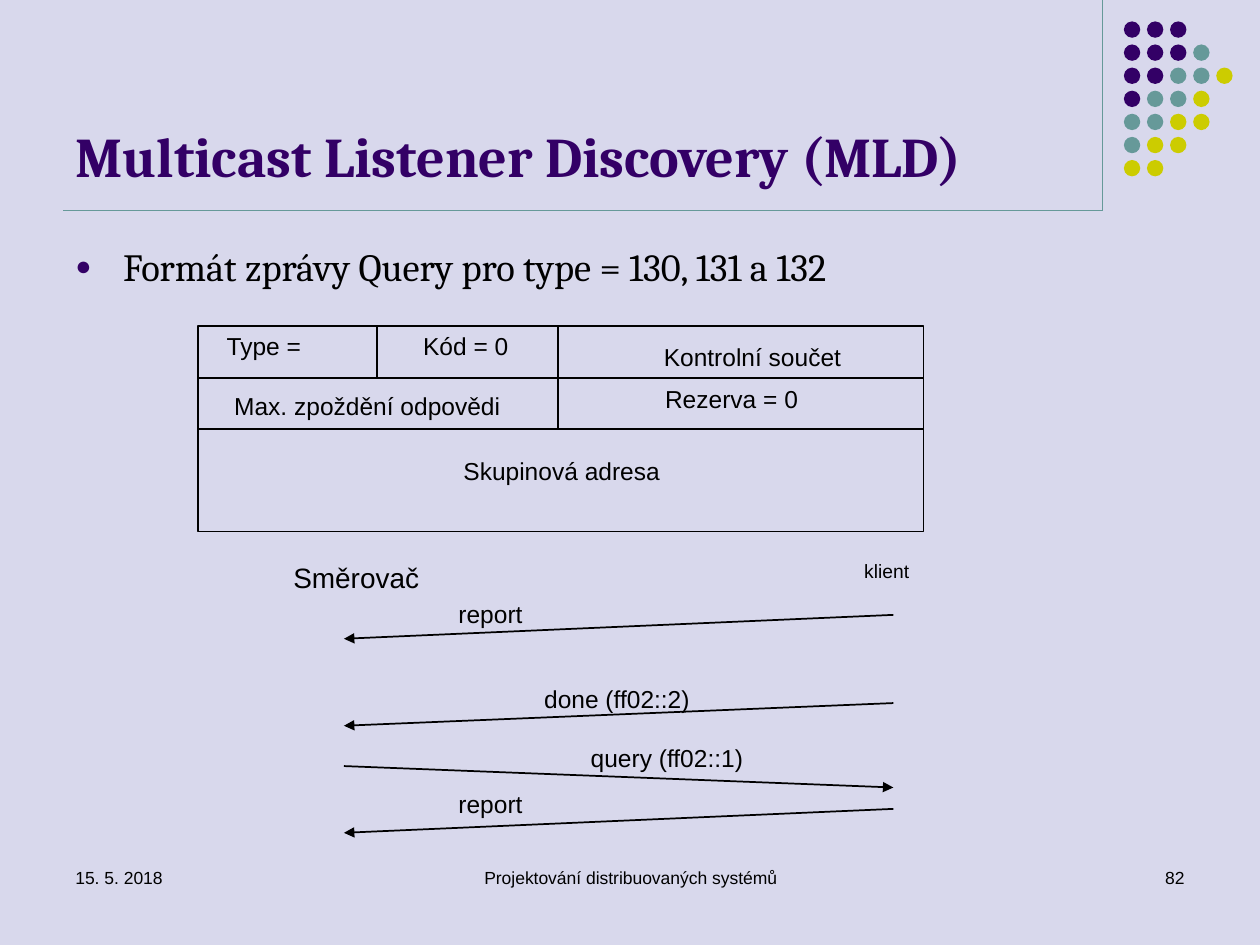
from lxml.etree import SubElement
from pptx import Presentation
from pptx.dml.color import RGBColor as RGB
from pptx.enum.shapes import MSO_CONNECTOR as CONN, MSO_SHAPE as SHAPE
from pptx.enum.text import MSO_ANCHOR as ANCHOR, PP_ALIGN as ALIGN
from pptx.oxml.ns import qn
from pptx.util import Inches, Pt

COLORS = {"bg": "D8D8EC", "purple": "330066", "teal": "669999",
          "lime": "CCCC00", "black": "000000"}
TITLE = "Multicast Listener Discovery (MLD)"
BULLET = "Formát zprávy Query pro type = 130, 131 a 132"
FOOTER = [("15. 5. 2018", 0.5, 2.33, ALIGN.LEFT),
          ("Projektování distribuovaných systémů", 3.42, 3.17, ALIGN.CENTER),
          ("82", 7.17, 2.33, ALIGN.RIGHT)]
DOTS = ["PPP", "PPPT", "PPTTL", "PTTL", "TTLL", "TLL", "LL"]
DOT_COLORS = {"P": "purple", "T": "teal", "L": "lime"}
DOT_LEFT, DOT_TOP, DOT_STEP, DOT_SIZE = 8.92, 0.17, 0.55 / 3, 0.13
RULE_X, RULE_Y = 8.75, 1.67

FRAME = (1.57, 2.59, 5.76, 1.63)
FRAME_ROWS = 4
COLUMN_RULES = [(2.99, 1), (4.43, 2)]
FIELDS = [("Type =", 1.7, 2.56, 0.89, 0.5),
          ("Kód = 0", 3.26, 2.56, 0.96, 0.5),
          ("Kontrolní součet", 5.17, 2.65, 1.77, 0.5),
          ("Max. zpoždění odpovědi", 1.76, 3.04, 2.48, 0.5),
          ("Skupinová adresa", 3.58, 3.55, 1.87, 0.61),
          ("Rezerva = 0", 5.18, 2.98, 1.33, 0.5)]

ROUTER_X, CLIENT_X = 2.73, 7.09
ACTORS = [("Směrovač", 2.23, 4.38, 1.25, 0.4, 16),
          ("klient", 6.76, 4.38, 0.72, 0.51, 11)]
MESSAGES = [("report", 3.54, 4.69, 0.8, 0.38, "router", 4.88, 5.07),
            ("done (ff02::2)", 4.22, 5.36, 1.45, 0.4, "router", 5.58, 5.76),
            ("query (ff02::1)", 4.59, 5.83, 1.5, 0.37, "client", 6.08, 6.25),
            ("report", 3.54, 6.2, 0.8, 0.41, "router", 6.42, 6.61)]

prs = Presentation()
prs.slide_width, prs.slide_height = Inches(10), Inches(7.5)
s = prs.slides.add_slide(prs.slide_layouts[6])
s.background.fill.solid()
s.background.fill.fore_color.rgb = RGB.from_string(COLORS["bg"])


def add_text(text, x, y, w, h, size=14, font="Arial", color="black", bold=False,
             align=ALIGN.LEFT, anchor=ANCHOR.TOP):
    sp = s.shapes.add_textbox(*map(Inches, (x, y, w, h)))
    tf = sp.text_frame
    tf.word_wrap, tf.vertical_anchor = True, anchor
    p = tf.paragraphs[0]
    p.alignment = align
    r = p.add_run()
    r.text = text
    r.font.size, r.font.name, r.font.bold = Pt(size), font, bold
    r.font.color.rgb = RGB.from_string(COLORS[color])
    return p


def add_label(text, *box, size=14):
    p = add_text(text, *box, size=size)
    p.line_spacing, p.space_after = 1.07, Pt(8)


def add_line(x1, y1, x2, y2, color="black", width=1, arrow=False):
    sp = s.shapes.add_connector(CONN.STRAIGHT, *map(Inches, (x1, y1, x2, y2)))
    sp.line.color.rgb = RGB.from_string(COLORS[color])
    sp.line.width = Pt(width)
    if arrow:
        SubElement(sp.line._get_or_add_ln(), qn("a:tailEnd"), type="triangle")
    SubElement(sp._element.spPr, qn("a:effectLst"))
    return sp


def add_shape(kind, x, y, w, h, fill=None):
    sp = s.shapes.add_shape(kind, *map(Inches, (x, y, w, h)))
    sp.shadow.inherit = False
    if fill:
        sp.fill.solid()
        sp.fill.fore_color.rgb = RGB.from_string(COLORS[fill])
        sp.line.fill.background()
    else:
        sp.fill.background()
        sp.line.color.rgb = RGB.from_string(COLORS["black"])
        sp.line.width = Pt(1)
    return sp


def add_bullet(p, char, color, percent, indent):
    pPr = p._p.get_or_add_pPr()
    pPr.set("marL", str(Inches(indent)))
    pPr.set("indent", str(-Inches(indent)))
    SubElement(SubElement(pPr, qn("a:buClr")), qn("a:srgbClr"), val=COLORS[color])
    SubElement(pPr, qn("a:buSzPct"), val=str(percent * 1000))
    SubElement(pPr, qn("a:buFont"), typeface="Arial")
    SubElement(pPr, qn("a:buChar"), char=char)


add_line(RULE_X, 0, RULE_X, RULE_Y, color="teal", width=0.75)
add_line(0.5, RULE_Y, RULE_X, RULE_Y, color="teal", width=0.75)
for row, dots in enumerate(DOTS):
    for col, dot in enumerate(dots):
        add_shape(SHAPE.OVAL, DOT_LEFT + col * DOT_STEP, DOT_TOP + row * DOT_STEP,
                  DOT_SIZE, DOT_SIZE, fill=DOT_COLORS[dot])

add_text(TITLE, 0.5, 0.13, 8.25, 1.42, size=32, font="Cambria", color="purple",
         bold=True, anchor=ANCHOR.BOTTOM)
p = add_text(BULLET, 0.5, 1.88, 9, 0.53, size=22, font="Cambria")
p.space_before = Pt(4.4)
add_bullet(p, "●", "purple", 70, 0.38)
for text, x, w, align in FOOTER:
    add_text(text, x, 6.83, w, 0.5, size=10, align=align)

left, top, width, height = FRAME
row_h = height / FRAME_ROWS
frame = add_shape(SHAPE.RECTANGLE, *FRAME)
for x, rows in COLUMN_RULES:
    add_line(x, top, x, top + rows * row_h)
add_line(left, top + row_h, left + width, top + row_h)
middle = add_line(left, top + 2 * row_h, left + width, top + 2 * row_h)
middle.begin_connect(frame, 1)
middle.end_connect(frame, 3)
for field in FIELDS:
    add_label(*field)

for *actor, size in ACTORS:
    add_label(*actor, size=size)
for *label, target, y1, y2 in MESSAGES:
    ends = (CLIENT_X, ROUTER_X) if target == "router" else (ROUTER_X, CLIENT_X)
    add_line(ends[0], y1, ends[1], y2, arrow=True)
    add_label(*label)

prs.save("out.pptx")
